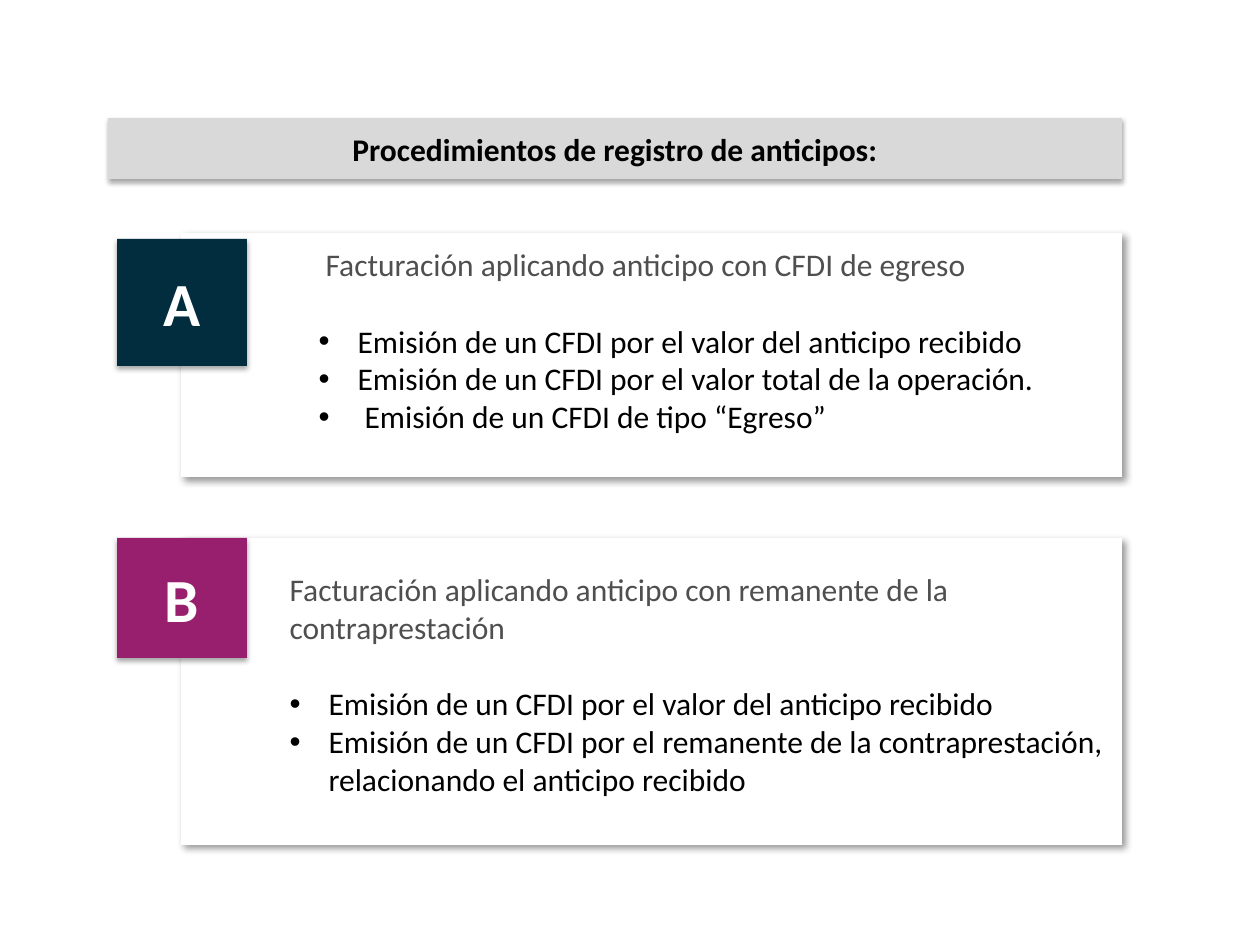
from lxml.etree import SubElement as Sub
from pptx import Presentation
from pptx.dml.color import RGBColor
from pptx.enum.shapes import MSO_SHAPE as Geo
from pptx.enum.text import MSO_ANCHOR as Anchor, MSO_AUTO_SIZE as Fit, PP_ALIGN as Align
from pptx.oxml.ns import qn
from pptx.util import Pt

PX = 914400 / 126
HUES = {
    "white": "FFFFFF", "black": "000000", "gray": "D9D9D9",
    "head": "504F4F", "navy": "012D3F", "plum": "981F6E",
}
# Shadow: opacity in %, blur and distance in points, angle in degrees
DEEP = (40, 4, 3, 45)
SOFT = (35, 3.1, 1.8, 90)
HANG = 39  # bullet to text
NUDGE = 7  # extra inset of single lines in block A

BLOCKS = [
    dict(
        mark="A", hue="navy", top=233, high=244, tile=(239, 127),
        text=(306, 239, 816, 299), nudge=NUDGE,
        head="Facturación aplicando anticipo con CFDI de egreso",
        items=[
            ("Emisión de un CFDI por el valor del anticipo recibido", HANG),
            ("Emisión de un CFDI por el valor total de la operación.", HANG),
            ("Emisión de un CFDI de tipo “Egreso”", HANG + NUDGE),
        ],
    ),
    dict(
        mark="B", hue="plum", top=538, high=307, tile=(538, 120),
        text=(277, 564, 845, 242), nudge=0,
        head="Facturación aplicando anticipo con remanente de la contraprestación",
        items=[
            ("Emisión de un CFDI por el valor del anticipo recibido", HANG),
            ("Emisión de un CFDI por el remanente de la contraprestación, "
             "relacionando el anticipo recibido", HANG),
        ],
    ),
]


def px(num):
    return round(num * PX)


def rgb(hue):
    return RGBColor.from_string(HUES[hue])


def place(shape, left, top, wide, high):
    """Set the bounds and bring the shape to the front."""
    shape.left, shape.top = px(left), px(top)
    shape.width, shape.height = px(wide), px(high)
    shape.element.getparent().append(shape.element)


def paint(shape, hue, shade):
    shape.fill.solid()
    shape.fill.fore_color.rgb = rgb(hue)
    shape.line.fill.background()
    shape.shadow.inherit = False
    alpha, blur, dist, angle = shade
    fx = shape.element.spPr.find(qn("a:effectLst"))
    drop = Sub(fx, qn("a:outerShdw"), blurRad=str(Pt(blur)), dist=str(Pt(dist)),
               dir=str(angle * 60000), algn="tl", rotWithShape="0")
    tint = Sub(drop, qn("a:srgbClr"), val=HUES["black"])
    Sub(tint, qn("a:alpha"), val=str(alpha * 1000))


def write(para, text, size=18, hue="black", bold=False, align=Align.LEFT,
          inset=0, bullet=False, before=0):
    props = para._p.get_or_add_pPr()
    props.set("marL", str(px(inset)))
    props.set("indent", str(px(-inset if bullet else 0)))
    if bullet:
        Sub(props, qn("a:buFont"), typeface="Arial")
        Sub(props, qn("a:buChar"), char="•")
    else:
        Sub(props, qn("a:buNone"))
    para.alignment = align
    para.space_before = Pt(before)
    run = para.add_run()
    run.text = text
    font = run.font
    font.name, font.size, font.bold = "Calibri", Pt(size), bold
    font.color.rgb = rgb(hue)


def frame(shape, anchor):
    body = shape.text_frame
    body.word_wrap = True
    body.auto_size = Fit.NONE
    body.vertical_anchor = anchor
    return body


def rect(slide, box, hue, shade):
    shape = slide.shapes.add_shape(Geo.RECTANGLE, *map(px, box))
    paint(shape, hue, shade)
    return shape


def label(shape, text, **form):
    body = frame(shape, Anchor.MIDDLE)
    write(body.paragraphs[0], text, bold=True, align=Align.CENTER, **form)


def block(slide, holder, data):
    """Draw a panel with its heading, list and letter tile."""
    rect(slide, (181, data["top"], 941, data["high"]), "white", DEEP)
    place(holder, *data["text"])
    body = frame(holder, Anchor.TOP)
    write(body.paragraphs[0], data["head"], hue="head", inset=data["nudge"])
    for num, (text, inset) in enumerate(data["items"]):
        write(body.add_paragraph(), text, inset=inset, bullet=True,
              before=0 if num else 22)
    top, high = data["tile"]
    tile = rect(slide, (117, top, 130, high), data["hue"], SOFT)
    label(tile, data["mark"], size=35, hue="white")


def main():
    deck = Presentation()
    deck.slide_width, deck.slide_height = px(1260), px(945)
    slide = deck.slides.add_slide(deck.slide_layouts.get_by_name("Two Content"))
    title, *lists = list(slide.placeholders)[:3]
    place(title, 108, 118, 1014, 61)
    paint(title, "gray", SOFT)
    label(title, "Procedimientos de registro de anticipos:")
    for holder, data in zip(lists, BLOCKS):
        block(slide, holder, data)
    deck.save("out.pptx")


if __name__ == "__main__":
    main()
